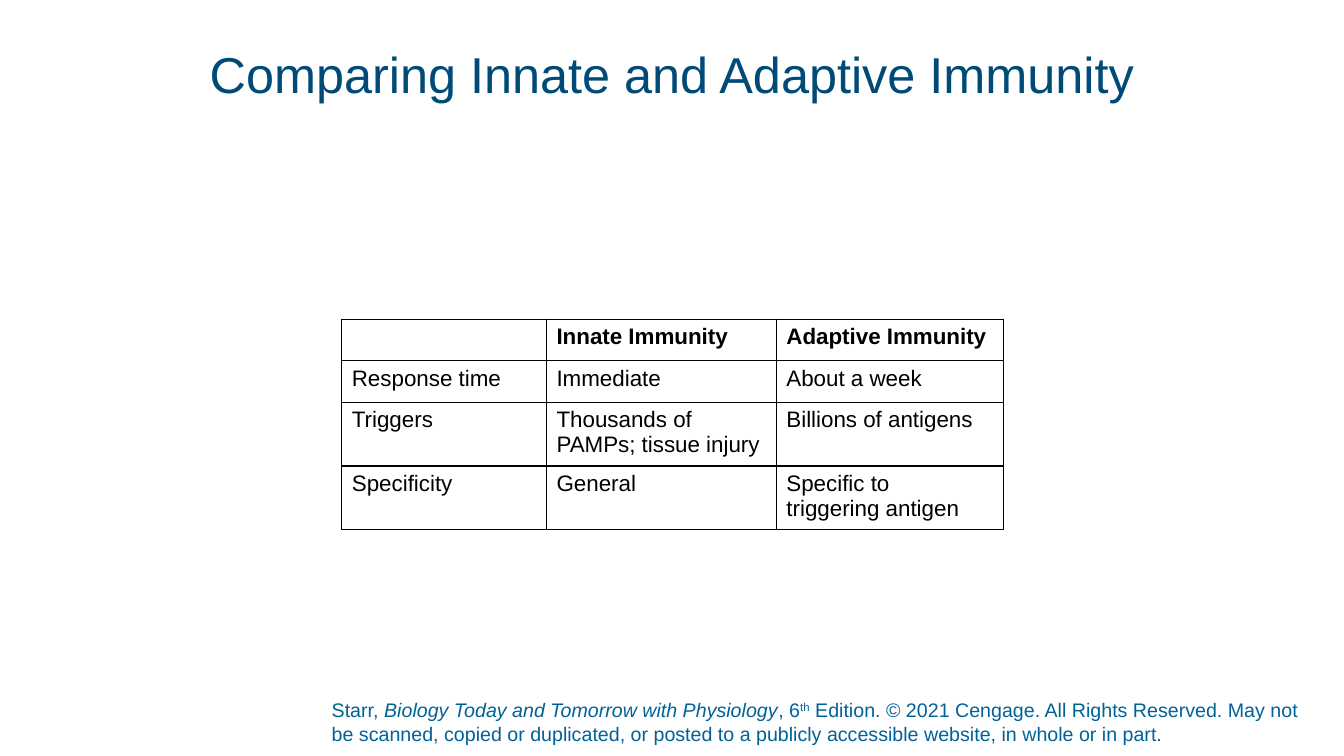
"""Build a slide with a table that compares innate and adaptive immunity."""
from lxml import etree
from pptx import Presentation
from pptx import util as u
from pptx.dml.color import RGBColor
from pptx.enum import text
from pptx.oxml.ns import qn

WIDE, HIGH = 13.33, 7.5


def style(run, size, color, **extra):
    run.font.color.rgb = RGBColor.from_string(color)
    for name, value in dict(name="Arial", size=u.Pt(size), **extra).items():
        setattr(run.font, name, value)


def place(left, top, width, height, anchor, foot=0):
    box = slide.shapes.add_textbox(*map(u.Inches, (left, top, width, height)))
    form = dict(word_wrap=True, vertical_anchor=anchor, margin_left=0,
                margin_right=0, margin_top=0, margin_bottom=u.Inches(foot))
    for name, value in form.items():
        setattr(box.text_frame, name, value)
    return box.text_frame.paragraphs[0]


deck = Presentation()
deck.slide_width, deck.slide_height = u.Inches(WIDE), u.Inches(HIGH)
slide = deck.slides.add_slide(deck.slide_layouts[6])

notice = place(3.29, 6.92, 9.79, 0.52, text.MSO_ANCHOR.BOTTOM, 0.05)
parts = [
    ("Starr, ", False, 0),
    ("Biology Today and Tomorrow with Physiology", True, 0),
    (", 6", False, 0),
    ("th", False, 30),
    (" Edition. © 2021 Cengage. All Rights Reserved. May not be scanned, "
     "copied or duplicated, or posted to a publicly accessible website, "
     "in whole or in part.", False, 0),
]
for words, slant, rise in parts:
    run = notice.add_run()
    run.text = words
    style(run, 14, "006298", italic=slant)
    if rise:
        run.font._element.set("baseline", str(rise * 1000))

title = place(0.92, 0.4, WIDE - 2 * 0.92, 0.74, text.MSO_ANCHOR.MIDDLE)
title.alignment, title.line_spacing = text.PP_ALIGN.CENTER, 0.9
run = title.add_run()
run.text = "Comparing Innate and Adaptive Immunity"
style(run, 36, "004A78")

rows = [
    ("", "Innate Immunity", "Adaptive Immunity"),
    ("Response time", "Immediate", "About a week"),
    ("Triggers", "Thousands of\nPAMPs; tissue injury", "Billions of antigens"),
    ("Specificity", "General", "Specific to\ntriggering antigen"),
]
cols, step = (2.03, 2.28, 2.25), 0.41
grid = slide.shapes.add_table(
    len(rows), len(cols), u.Inches(3.39), u.Inches(3.17),
    u.Inches(sum(cols)), u.Inches(step * len(rows))).table
grid.horz_banding = False
for col, width in zip(grid.columns, cols):
    col.width = u.Inches(width)

for r, row in enumerate(rows):
    grid.rows[r].height = u.Inches(step)
    for c, words in enumerate(row):
        cell = grid.cell(r, c)
        cell.text = words
        for para in cell.text_frame.paragraphs:
            para.font.size = u.Pt(16)
            for run in para.runs:
                style(run, 16, "000000", bold=r == 0)
        props = cell._tc.get_or_add_tcPr()
        for side in ("lnL", "lnR", "lnT", "lnB"):
            line = etree.SubElement(props, qn(f"a:{side}"), w=str(u.Pt(1)))
            fill = etree.SubElement(line, qn("a:solidFill"))
            etree.SubElement(fill, qn("a:srgbClr"), val="000000")
        cell.fill.background()

deck.save("out.pptx")
